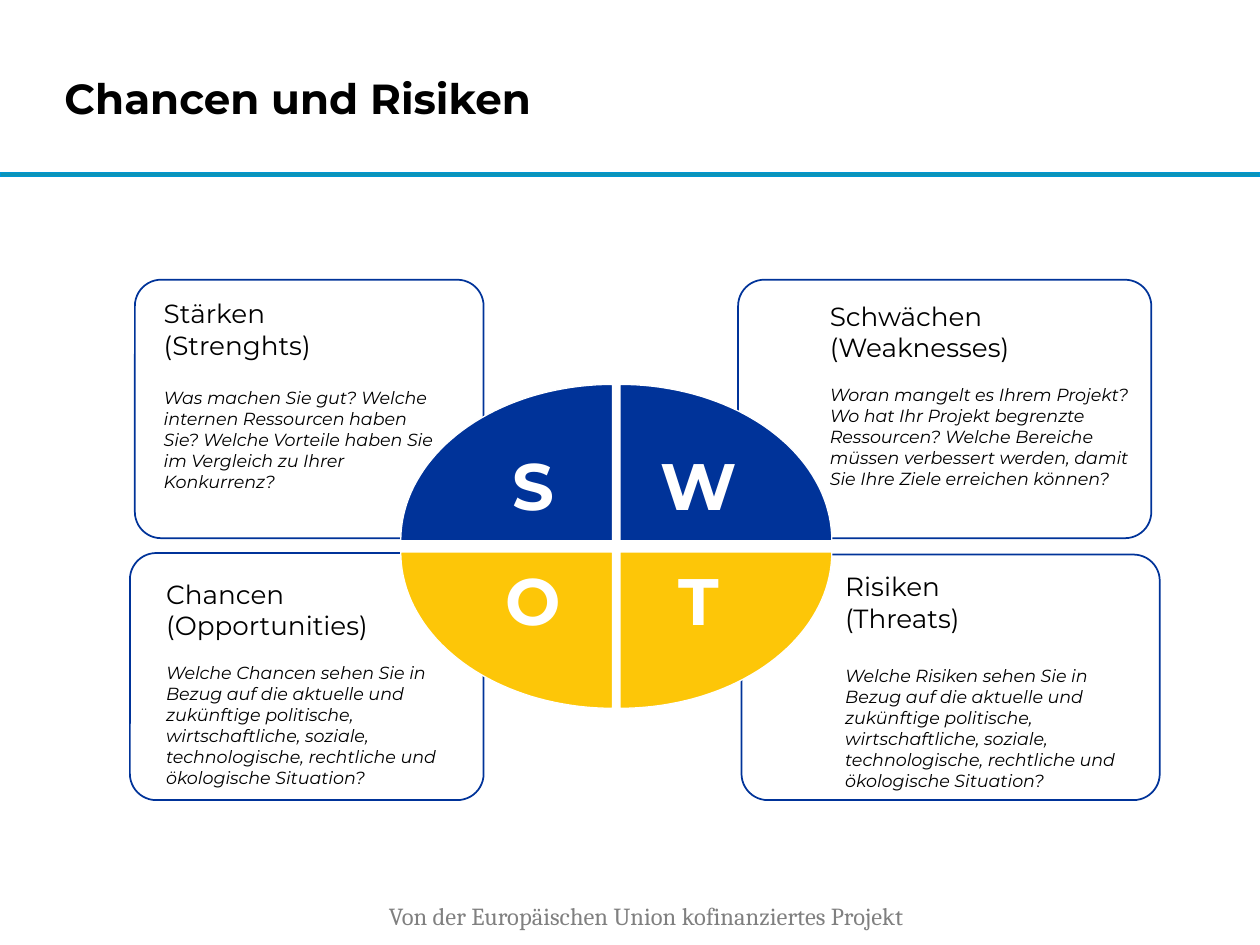
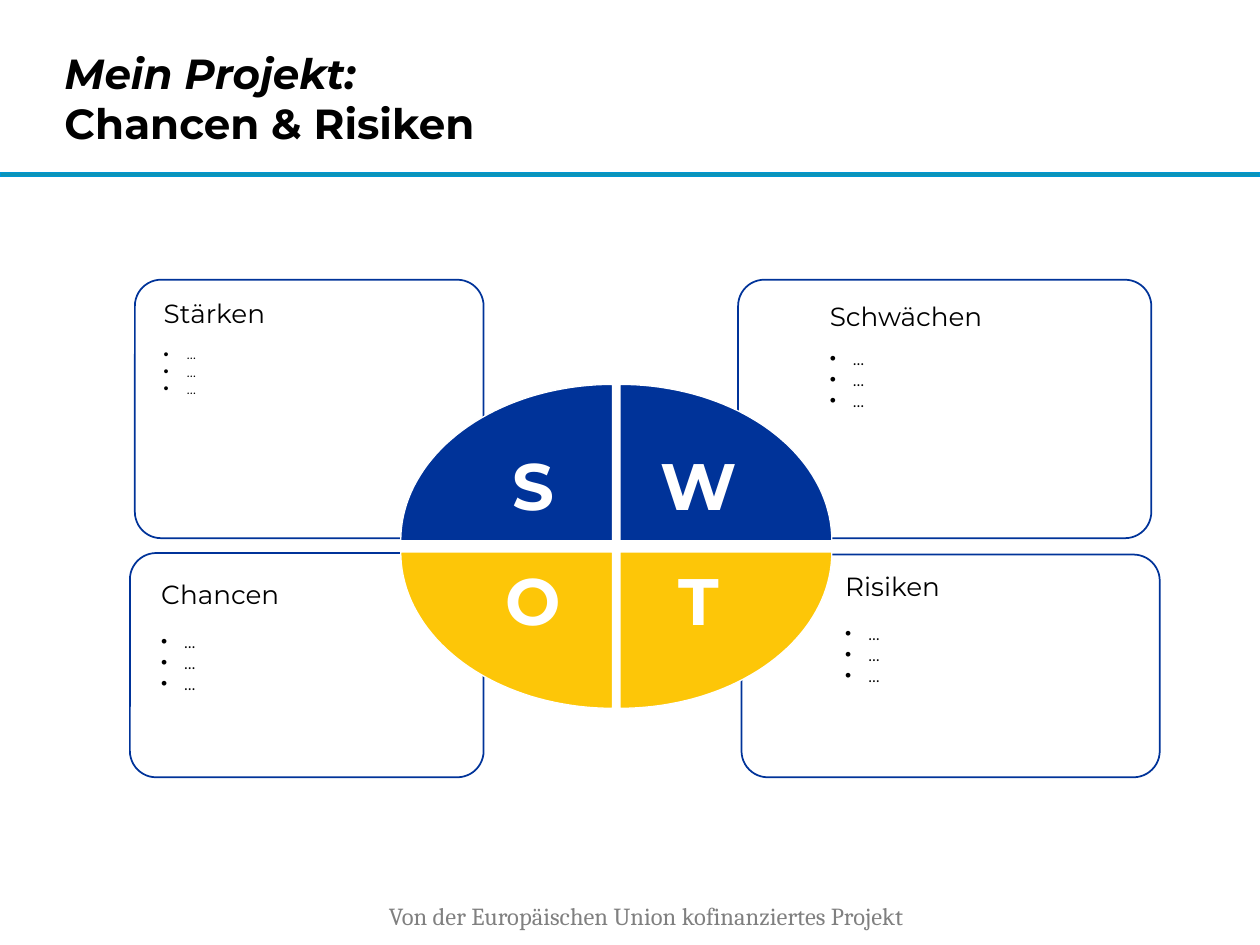
from itertools import product
from math import cos, pi, sin

from lxml.etree import SubElement
from pptx import Presentation
from pptx.dml.color import RGBColor
from pptx.enum.shapes import MSO_SHAPE
from pptx.enum.text import MSO_ANCHOR, PP_ALIGN
from pptx.oxml.ns import qn
from pptx.util import Cm, Pt

COLORS = {
    "band": "0C94B7",
    "band_edge": "0096D3",
    "blue": "003399",
    "yellow": "FDC608",
    "white": "FFFFFF",
    "text": "000000",
    "footer": "808080",
}
FONT = "Montserrat"
FOOTER_FONT = "Cambria"
TITLE_BOX = (1.3, 0.46, 18.47, 3.02)
BAND_BOX = (0, 3.48, 25.4, 0.08)
FOOTER_BOX = (7.59, 18.03, 13.74, 0.86)
WHEEL_BOX = (8.08, 7.75, 8.69, 6.53)
WHEEL_GAP = (0.15, 0.23)
CORNER = 0.53
ARC_STEPS = 40
SPECIAL_INDENT = Cm(0.48)


def rgb(name):
    return RGBColor.from_string(COLORS[name])


def add_run(paragraph, text, size, color="text", font=FONT, bold=False, italic=False):
    run = paragraph.add_run()
    run.text = text
    run.font.size = Pt(size)
    run.font.name = font
    run.font.bold = bold
    run.font.italic = italic
    run.font.color.rgb = rgb(color)


def add_lines(paragraph, lines, size, **style):
    for number, line in enumerate(lines):
        if number:
            paragraph.add_line_break()
        add_run(paragraph, line, size, **style)


def paint(shape, fill, line, width):
    shape.shadow.inherit = False
    if fill:
        shape.fill.solid()
        shape.fill.fore_color.rgb = rgb(fill)
    else:
        shape.fill.background()
    shape.line.color.rgb = rgb(line)
    shape.line.width = Pt(width)


def set_margins(frame, left, top, right, bottom):
    frame.margin_left, frame.margin_top = Cm(left), Cm(top)
    frame.margin_right, frame.margin_bottom = Cm(right), Cm(bottom)


def add_text_box(slide, box):
    frame = slide.shapes.add_textbox(*map(Cm, box)).text_frame
    frame.word_wrap = True
    return frame


def add_bullet(paragraph):
    properties = paragraph._p.get_or_add_pPr()
    properties.set("marL", str(SPECIAL_INDENT))
    properties.set("indent", str(-SPECIAL_INDENT))
    SubElement(properties, qn("a:buFont")).set("typeface", "Arial")
    SubElement(properties, qn("a:buChar")).set("char", "•")


def add_frame(slide, title_lines):
    band = slide.shapes.add_shape(MSO_SHAPE.RECTANGLE, *map(Cm, BAND_BOX))
    paint(band, "band", "band_edge", 1)
    footer = add_text_box(slide, FOOTER_BOX)
    add_run(footer.paragraphs[0], "Von der Europäischen Union kofinanziertes Projekt",
            14, "footer", FOOTER_FONT)

    title = slide.shapes.title
    title.left, title.top, title.width, title.height = map(Cm, TITLE_BOX)
    frame = title.text_frame
    frame.word_wrap = True
    frame.vertical_anchor = MSO_ANCHOR.MIDDLE
    set_margins(frame, 0, 0, 0, 0)
    heading = frame.paragraphs[0]
    heading.alignment = PP_ALIGN.LEFT
    for number, (text, italic) in enumerate(title_lines):
        if number:
            heading.add_line_break()
        add_run(heading, text, 24, bold=True, italic=italic)


def add_panel(slide, box):
    panel = slide.shapes.add_shape(MSO_SHAPE.ROUNDED_RECTANGLE, *map(Cm, box))
    panel.adjustments[0] = CORNER / min(box[2:])
    paint(panel, None, "blue", 1)


def add_wheel(slide, box):
    left, top, width, height = box
    radius_x, radius_y = ((size - gap) / 2 for size, gap in zip((width, height), WHEEL_GAP))
    for (row, column), letter in zip(product(range(2), repeat=2), "SWOT"):
        side_x, side_y = 2 * column - 1, 2 * row - 1
        hub_x = left + width / 2 + side_x * WHEEL_GAP[0] / 2
        hub_y = top + height / 2 + side_y * WHEEL_GAP[1] / 2
        angles = [pi / 2 * step / ARC_STEPS for step in range(ARC_STEPS + 1)]
        arc = [(Cm(hub_x + side_x * radius_x * cos(angle)),
                Cm(hub_y + side_y * radius_y * sin(angle))) for angle in angles]
        builder = slide.shapes.build_freeform(Cm(hub_x), Cm(hub_y))
        builder.add_line_segments(arc, close=True)
        quadrant = builder.convert_to_shape()
        paint(quadrant, "yellow" if row else "blue", "white", 0.75)

        frame = quadrant.text_frame
        frame.word_wrap = True
        frame.vertical_anchor = MSO_ANCHOR.TOP if row else MSO_ANCHOR.BOTTOM
        outer, inner = 1.42, 0.33
        set_margins(frame, inner if column else outer, inner if row else outer,
                    outer if column else inner, outer if row else inner)
        initial = frame.paragraphs[0]
        initial.alignment = PP_ALIGN.CENTER
        initial.line_spacing = 0.9
        add_run(initial, letter, 37.5, "white", bold=True)


def add_field_text(slide, box, heading_lines, entries, gap, size, bulleted):
    frame = add_text_box(slide, box)
    add_lines(frame.paragraphs[0], heading_lines, 15)
    for number, entry in enumerate(entries):
        paragraph = frame.add_paragraph()
        paragraph.space_before = Pt(0 if number else gap)
        if bulleted:
            add_bullet(paragraph)
        add_run(paragraph, entry, size, italic=True)


def add_swot_slide(deck, title_lines, panels_bottom, fields, bulleted=False):
    slide = deck.slides.add_slide(deck.slide_layouts[5])
    add_frame(slide, title_lines)
    panels = [
        (2.72, 5.64, 7.03, 5.21),
        (14.88, 5.64, 8.33, 5.21),
        (2.62, 11.15, 7.13, panels_bottom - 11.15),
        (14.95, 11.18, 8.43, panels_bottom - 11.18),
    ]
    for panel in panels:
        add_panel(slide, panel)
    add_wheel(slide, WHEEL_BOX)
    for (left, top, _, height), field in zip(panels, fields):
        (indent, drop, width), heading_lines, entries, gap, size = field
        box = (left + indent, top + drop, width, height - drop)
        add_field_text(slide, box, heading_lines, entries, gap, size, bulleted)


def main():
    deck = Presentation()
    deck.slide_width, deck.slide_height = Cm(25.4), Cm(19.05)

    outlook = ("sehen Sie in Bezug auf die aktuelle und zukünftige politische, "
               "wirtschaftliche, soziale, technologische, rechtliche und "
               "ökologische Situation?")
    add_swot_slide(deck, [("Chancen und Risiken", False)], 16.13, [
        ((0.33, 0.23, 6.15), ["Stärken", "(Strenghts)"],
         ["Was machen Sie gut? Welche internen Ressourcen haben Sie? "
          "Welche Vorteile haben Sie im Vergleich zu Ihrer Konkurrenz?"], 15, 10),
        ((1.6, 0.28, 6.83), ["Schwächen", "(Weaknesses)"],
         ["Woran mangelt es Ihrem Projekt? Wo hat Ihr Projekt begrenzte Ressourcen? "
          "Welche Bereiche müssen verbessert werden, damit Sie Ihre Ziele "
          "erreichen können?"], 12, 10),
        ((0.48, 0.38, 6.25), ["Chancen (Opportunities)"],
         [f"Welche Chancen {outlook}"], 12, 10),
        ((1.84, 0.2, 6.5), ["Risiken", "(Threats)"],
         [f"Welche Risiken {outlook}"], 18, 10),
    ])

    blanks = ["…"] * 3
    add_swot_slide(deck, [("Mein Projekt:", True), ("Chancen & Risiken", False)], 15.67, [
        ((0.33, 0.23, 6.15), ["Stärken"], blanks, 9.6, 8.2),
        ((1.6, 0.28, 7.19), ["Schwächen"], blanks, 9.6, 10),
        ((0.38, 0.38, 6.25), ["Chancen"], blanks, 12, 10),
        ((1.84, 0.2, 6.88), ["Risiken"], blanks, 12, 10),
    ], bulleted=True)
    deck.save("out.pptx")


if __name__ == "__main__":
    main()
